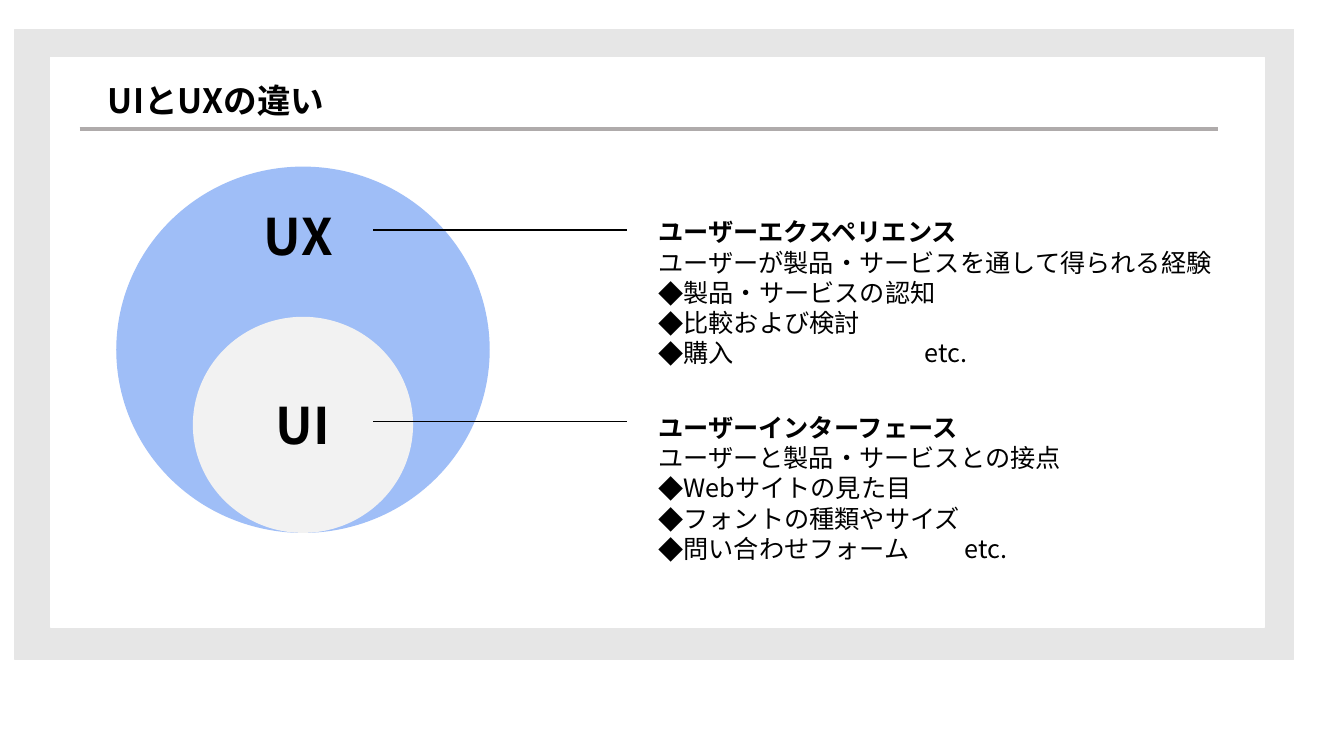
from lxml import etree
from pptx import Presentation
from pptx.dml.color import RGBColor
from pptx.enum.shapes import MSO_CONNECTOR, MSO_SHAPE
from pptx.enum.text import MSO_ANCHOR, MSO_AUTO_SIZE, PP_ALIGN
from pptx.oxml.ns import qn
from pptx.util import Inches, Pt

RECT, OVAL = MSO_SHAPE.RECTANGLE, MSO_SHAPE.OVAL
STRAIGHT = MSO_CONNECTOR.STRAIGHT
LEFT, CENTER = PP_ALIGN.LEFT, PP_ALIGN.CENTER
TOP, NO_FIT = MSO_ANCHOR.TOP, MSO_AUTO_SIZE.NONE

FONT = "Noto Sans CJK JP"
BLACK = RGBColor(0, 0, 0)
WHITE = RGBColor(0xFF, 0xFF, 0xFF)
FRAME_GREY = RGBColor(0xE6, 0xE6, 0xE6)
RULE_GREY = RGBColor(0xAF, 0xAB, 0xAB)
UX_BLUE = RGBColor(0x9F, 0xBE, 0xF7)
UI_GREY = RGBColor(0xF2, 0xF2, 0xF2)

TITLE = "UIとUXの違い"
CONCEPTS = [
    {
        "label": "UX", "align": LEFT, "label_top": 1.99, "leader": 2.28,
        "text_top": 2.1, "text_width": 6, "etc_tab": 2.64,
        "heading": "ユーザーエクスペリエンス",
        "meaning": "ユーザーが製品・サービスを通して得られる経験",
        "examples": ["製品・サービスの認知", "比較および検討", "購入\tetc."],
    },
    {
        "label": "UI", "align": CENTER, "label_top": 3.86, "leader": 4.18,
        "text_top": 4.04, "text_width": 4.44, "etc_tab": 3.04,
        "heading": "ユーザーインターフェース",
        "meaning": "ユーザーと製品・サービスとの接点",
        "examples": ["Webサイトの見た目", "フォントの種類やサイズ", "問い合わせフォーム\tetc."],
    },
]
PANELS = [
    (RECT, (0.15, 0.29, 12.68, 6.25), FRAME_GREY),
    (RECT, (0.5, 0.57, 12.04, 5.65), WHITE),
]
CIRCLE_CENTER, CIRCLE_BOTTOM = 3.005, 5.28
CIRCLES = [(3.69, 3.62, UX_BLUE), (2.17, 2.13, UI_GREY)]
LABEL_WIDTH, LABEL_HEIGHT = 0.97, 0.71
LEADER_START, LEADER_END = 3.7, 6.22
TEXT_LEFT, TEXT_HEIGHT = 6.43, 1.62
BULLET_INDENT = 0.25


def add_block(slide, kind, box, color):
    block = slide.shapes.add_shape(kind, *map(Inches, box))
    block.shadow.inherit = False
    block.fill.solid()
    block.fill.fore_color.rgb = color
    block.line.color.rgb = color
    block.line.width = Pt(1)


def add_line(slide, start, end, y, color, width):
    line = slide.shapes.add_connector(
        STRAIGHT, Inches(start), Inches(y), Inches(end), Inches(y))
    line.line.color.rgb = color
    line.line.width = Pt(width)
    etree.SubElement(line._element.spPr, qn("a:effectLst"))


def add_text(slide, left, top, width, height, lines):
    box = slide.shapes.add_textbox(*map(Inches, (left, top, width, height)))
    box.text_frame.word_wrap = True
    box.text_frame.text = "\n".join(lines)
    return box.text_frame.paragraphs


def style(paragraph, size, bold, align=LEFT):
    paragraph.alignment = align
    for run in paragraph.runs:
        run.font.name = FONT
        run.font.size = Pt(size)
        run.font.bold = bold
        run.font.color.rgb = BLACK
        etree.SubElement(run.font._element, qn("a:ea"), typeface=FONT)


def make_bullet(paragraph, etc_tab):
    props = paragraph._p.get_or_add_pPr()
    props.set("marL", str(Inches(BULLET_INDENT)))
    props.set("indent", str(-Inches(BULLET_INDENT)))
    etree.SubElement(props, qn("a:buFont"), typeface=FONT)
    etree.SubElement(props, qn("a:buChar"), char="◆")
    if "\t" in paragraph.text or "\v" in paragraph.text:
        tabs = etree.SubElement(props, qn("a:tabLst"))
        etree.SubElement(tabs, qn("a:tab"), pos=str(Inches(etc_tab)), algn="l")


def add_title(slide):
    title = slide.shapes.title
    title.left, title.top, title.width, title.height = map(
        Inches, (0.97, 0.74, 9.86, 0.5))
    frame = title.text_frame
    frame.text = TITLE
    frame.auto_size = NO_FIT
    frame.vertical_anchor = TOP
    style(frame.paragraphs[0], 24, True)
    slide.shapes._spTree.append(title._element)


def add_concept(slide, concept):
    label, = add_text(slide, CIRCLE_CENTER - LABEL_WIDTH / 2, concept["label_top"],
                      LABEL_WIDTH, LABEL_HEIGHT, [concept["label"]])
    style(label, 36, True, concept["align"])
    add_line(slide, LEADER_START, LEADER_END, concept["leader"], BLACK, 1)
    heading, meaning, *examples = add_text(
        slide, TEXT_LEFT, concept["text_top"], concept["text_width"], TEXT_HEIGHT,
        [concept["heading"], concept["meaning"], *concept["examples"]])
    style(heading, 18, True)
    style(meaning, 18, False)
    for example in examples:
        make_bullet(example, concept["etc_tab"])
        style(example, 18, False)


def main():
    deck = Presentation()
    deck.slide_width, deck.slide_height = Inches(13.33), Inches(7.5)
    slide = deck.slides.add_slide(deck.slide_layouts[5])
    for kind, box, color in PANELS:
        add_block(slide, kind, box, color)
    add_line(slide, 0.79, 12.08, 1.28, RULE_GREY, 3)
    for width, height, color in CIRCLES:
        box = (CIRCLE_CENTER - width / 2, CIRCLE_BOTTOM - height, width, height)
        add_block(slide, OVAL, box, color)
    for concept in CONCEPTS:
        add_concept(slide, concept)
    add_title(slide)
    deck.save("out.pptx")


if __name__ == "__main__":
    main()
